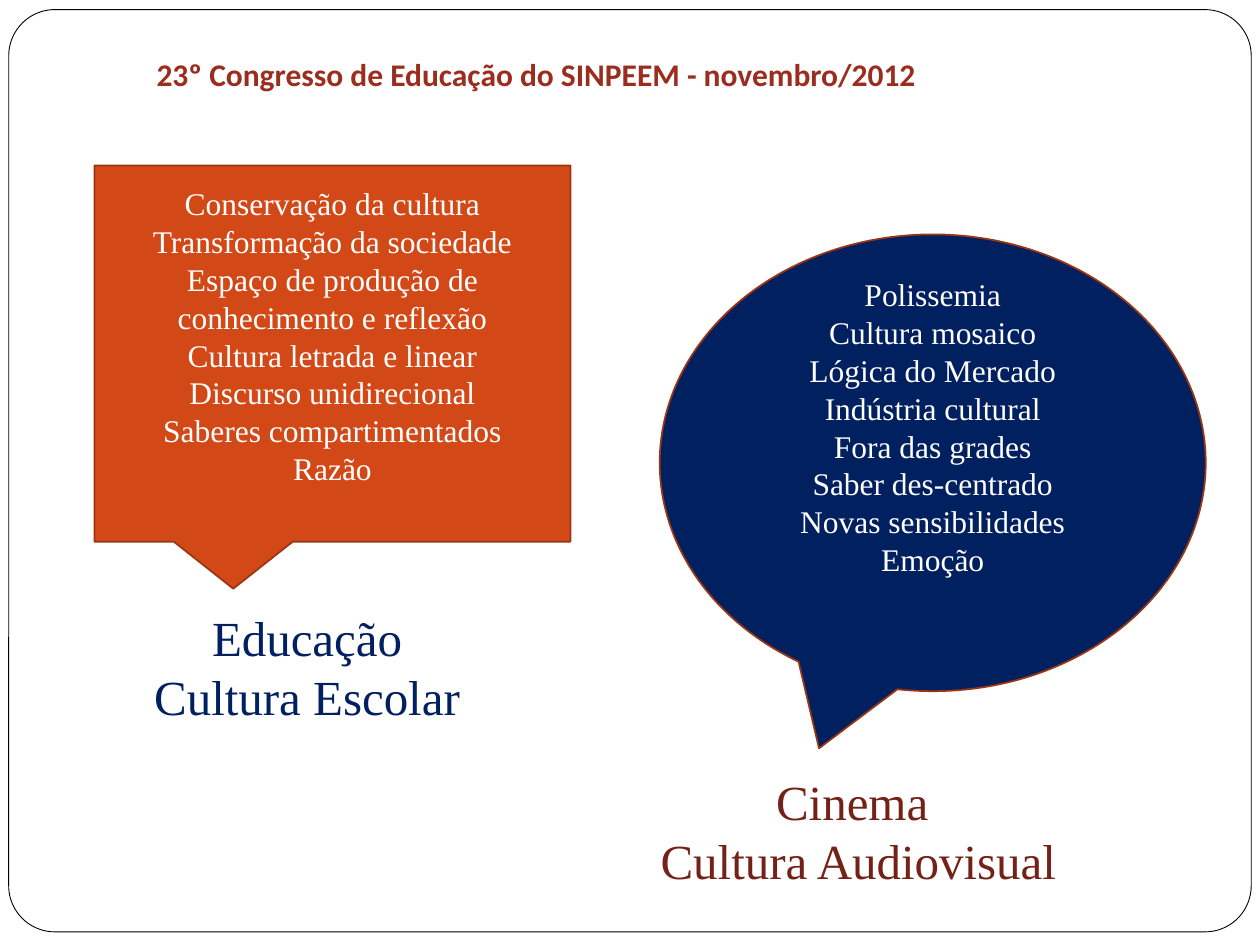
"""Build a slide contrasting school culture with audiovisual culture."""
from dataclasses import dataclass

from pptx import Presentation
from pptx import util as u
from pptx.dml.color import RGBColor
from pptx.enum import shapes, text


@dataclass(frozen=True)
class Theme:
    """Colours, fonts and type sizes."""
    white: str = "FFFFFF"
    black: str = "000000"
    orange: str = "D34817"
    rust: str = "9C3511"
    navy: str = "002060"
    wine: str = "742217"
    red: str = "9B2D1F"
    serif: str = "Times New Roman"
    sans: str = "Calibri"
    body: int = 18
    label: int = 28


class Deck:
    """Style and current slide, with one method per kind of element."""

    def __init__(self, prs, theme):
        """Add a title-only slide to the presentation."""
        self.theme = theme
        self.s = prs.slides.add_slide(prs.slide_layouts[5])

    def set_text(self, sp, content, size, color, font, bold=False):
        """Fill a shape with centred, uniformly styled paragraphs."""
        tf = sp.text_frame
        tf.text = content
        tf.word_wrap = True
        for p in tf.paragraphs:
            p.alignment = text.PP_ALIGN.CENTER
            for r in p.runs:
                r.font.size = u.Pt(size)
                r.font.name = font
                r.font.bold = bold
                r.font.color.rgb = RGBColor.from_string(color)
        return tf

    def shape(self, kind, box, fill, line, weight):
        """Draw a filled and outlined preset shape."""
        sp = self.s.shapes.add_shape(kind, *map(u.Pt, box))
        sp.shadow.inherit = False
        sp.fill.solid()
        sp.fill.fore_color.rgb = RGBColor.from_string(fill)
        sp.line.color.rgb = RGBColor.from_string(line)
        sp.line.width = u.Pt(weight)
        return sp

    def frame(self, box):
        """Draw the rounded border of the slide behind the title."""
        t = self.theme
        sp = self.shape(shapes.MSO_SHAPE.ROUNDED_RECTANGLE, box, t.white, t.black, 0.5)
        sp.adjustments[0] = 0.05
        self.s.shapes.title.element.addprevious(sp.element)

    def title(self, content, box):
        """Place and format the title placeholder."""
        t = self.theme
        sp = self.s.shapes.title
        sp.left, sp.top, sp.width, sp.height = map(u.Pt, box)
        tf = self.set_text(sp, content, t.body, t.red, t.sans, True)
        tf.vertical_anchor = text.MSO_ANCHOR.TOP

    def callout(self, kind, box, fill, lines, bottom):
        """Draw a speech balloon whose text is raised by a bottom margin."""
        t = self.theme
        sp = self.shape(kind, box, fill, t.rust, 1)
        tf = self.set_text(sp, "\n".join(lines), t.body, t.white, t.serif)
        tf.vertical_anchor = text.MSO_ANCHOR.MIDDLE
        tf.margin_bottom = u.Pt(bottom)

    def label(self, content, box, color):
        """Add a large caption below a balloon."""
        t = self.theme
        sp = self.s.shapes.add_textbox(*map(u.Pt, box))
        self.set_text(sp, content, t.label, color, t.serif)


def main():
    """Compose and save the slide."""
    prs = Presentation()
    prs.slide_width, prs.slide_height = u.Pt(720), u.Pt(540)
    t = Theme()
    deck = Deck(prs, t)
    deck.frame((5, 5.5, 710, 527))
    deck.title("23º Congresso de Educação do SINPEEM - novembro/2012", (54, 28, 505, 29))
    deck.callout(
        shapes.MSO_SHAPE.RECTANGULAR_CALLOUT, (54, 94.5, 272, 215), t.orange,
        ["Conservação da cultura", "Transformação da sociedade",
         "Espaço de produção de conhecimento e reflexão",
         "Cultura letrada e linear", "Discurso unidirecional",
         "Saberes compartimentados", "Razão"], 24)
    deck.callout(
        shapes.MSO_SHAPE.OVAL_CALLOUT, (377, 134, 312, 261), t.navy,
        ["Polissemia", "Cultura mosaico", "Lógica do Mercado",
         "Indústria cultural", "Fora das grades", "Saber des-centrado",
         "Novas sensibilidades", "Emoção"], 45)
    deck.label("Educação\nCultura Escolar", (70.5, 343.5, 210, 75), t.navy)
    deck.label("Cinema \nCultura Audiovisual", (292, 437.5, 397, 75), t.wine)
    prs.save("out.pptx")


if __name__ == "__main__":
    main()
